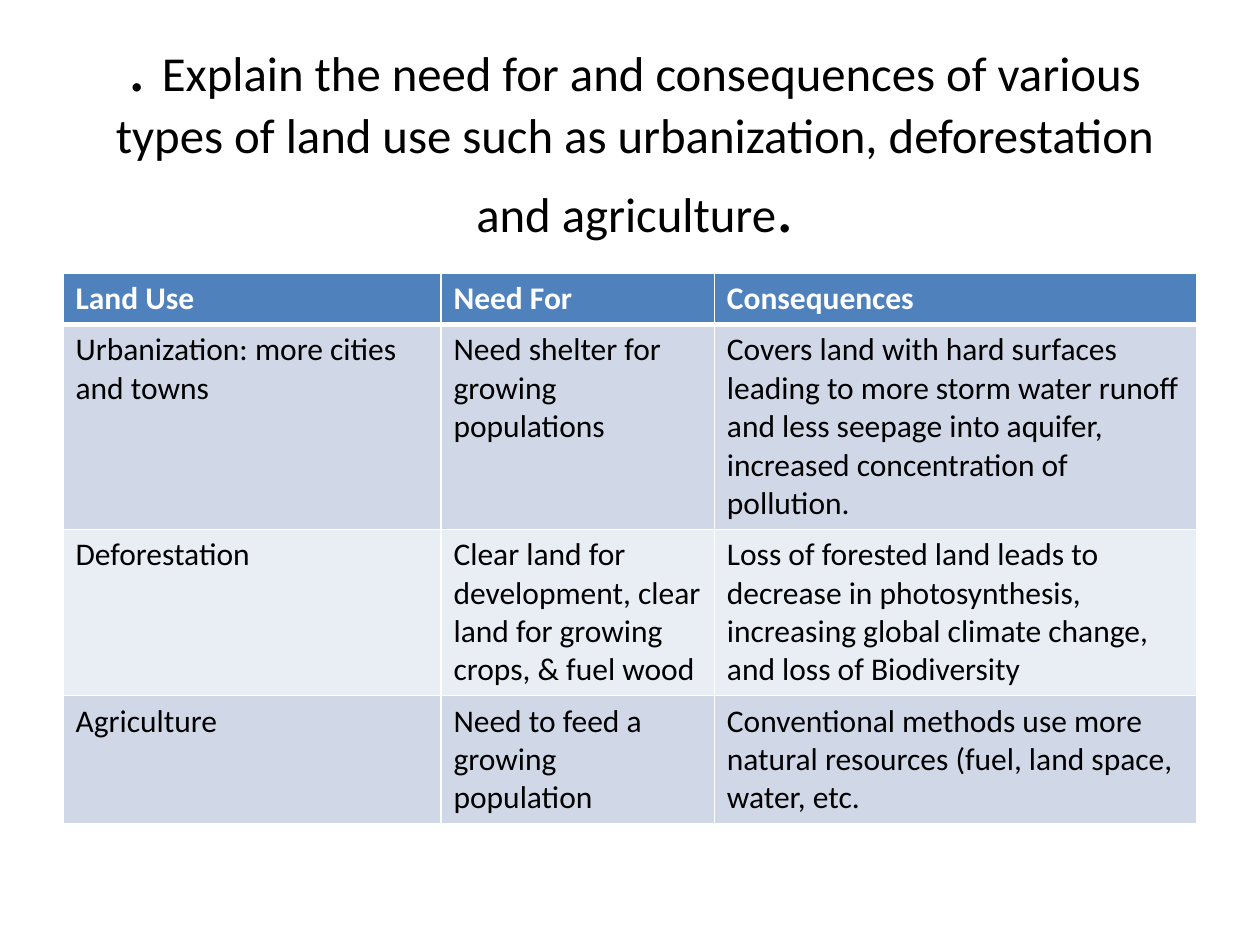
from lxml.etree import SubElement
from pptx import Presentation
from pptx.dml.color import RGBColor
from pptx.enum.text import MSO_ANCHOR, MSO_AUTO_SIZE, PP_ALIGN
from pptx.oxml.ns import qn
from pptx.util import Cm, Pt

FONT = "Calibri"
WHITE, BLACK, BLUE = "FFFFFF", "000000", "4F81BD"
BANDS = ("D0D8E8", "E9EDF4")
WIDTHS = (7.62, 5.51, 9.73)

TITLE = (
    (". ", 39.6),
    ("Explain the need for and consequences of various types of land use "
     "such as urbanization, deforestation and agriculture", 27.9),
    (".", 39.6),
)
ROWS = (
    ("Land Use", "Need For", "Consequences"),
    ("Urbanization: more cities and towns",
     "Need shelter for growing populations",
     "Covers land with hard surfaces leading to more storm water runoff and "
     "less seepage into aquifer, increased concentration of pollution."),
    ("Deforestation",
     "Clear land for development, clear land for growing crops, & fuel wood",
     "Loss of forested land leads to decrease in photosynthesis, increasing "
     "global climate change, and loss of Biodiversity"),
    ("Agriculture",
     "Need to feed a growing population",
     "Conventional methods use more natural resources (fuel, land space, "
     "water, etc."),
)


def paint(color, tone):
    color.rgb = RGBColor.from_string(tone)


def write(para, text, size=18, tone=BLACK, bold=False):
    run = para.add_run()
    run.text = text
    run.font.name = FONT
    run.font.size = Pt(size)
    run.font.bold = bold
    paint(run.font.color, tone)


def edge(cell, side, width):
    line = SubElement(cell._tc.get_or_add_tcPr(), qn(f"a:ln{side}"),
                      w=str(Pt(width)))
    fill = SubElement(line, qn("a:solidFill"))
    SubElement(fill, qn("a:srgbClr"), val=WHITE)


def add_title(slide):
    title = slide.shapes.title
    title.left, title.top = Cm(1.27), Cm(0.76)
    title.width, title.height = Cm(23.06), Cm(3.89)
    frame = title.text_frame
    frame.word_wrap = True
    frame.auto_size = MSO_AUTO_SIZE.NONE
    frame.vertical_anchor = MSO_ANCHOR.MIDDLE
    para = frame.paragraphs[0]
    para.alignment = PP_ALIGN.CENTER
    for text, size in TITLE:
        write(para, text, size=size)


def fill_cell(cell, text, row):
    head = row == 0
    # Heavier rule between the header and the body
    rules = {"L": 1, "R": 1, "T": 3 if row == 1 else 1, "B": 3 if head else 1}
    for side, width in rules.items():
        edge(cell, side, width)
    cell.fill.solid()
    paint(cell.fill.fore_color, BLUE if head else BANDS[(row - 1) % 2])
    write(cell.text_frame.paragraphs[0], text,
          tone=WHITE if head else BLACK, bold=head)


def add_grid(slide):
    high = Cm(1.03)
    table = slide.shapes.add_table(
        len(ROWS), len(WIDTHS), Cm(1.27), Cm(5.51),
        Cm(sum(WIDTHS)), high * len(ROWS)).table
    for col, width in zip(table.columns, WIDTHS):
        col.width = Cm(width)
    for row, texts in enumerate(ROWS):
        table.rows[row].height = high
        for col, text in enumerate(texts):
            fill_cell(table.cell(row, col), text, row)


def main():
    deck = Presentation()
    deck.slide_width, deck.slide_height = Cm(25.4), Cm(19.05)
    # Title Only layout
    slide = deck.slides.add_slide(deck.slide_layouts[5])
    add_title(slide)
    add_grid(slide)
    deck.save("out.pptx")


if __name__ == "__main__":
    main()
